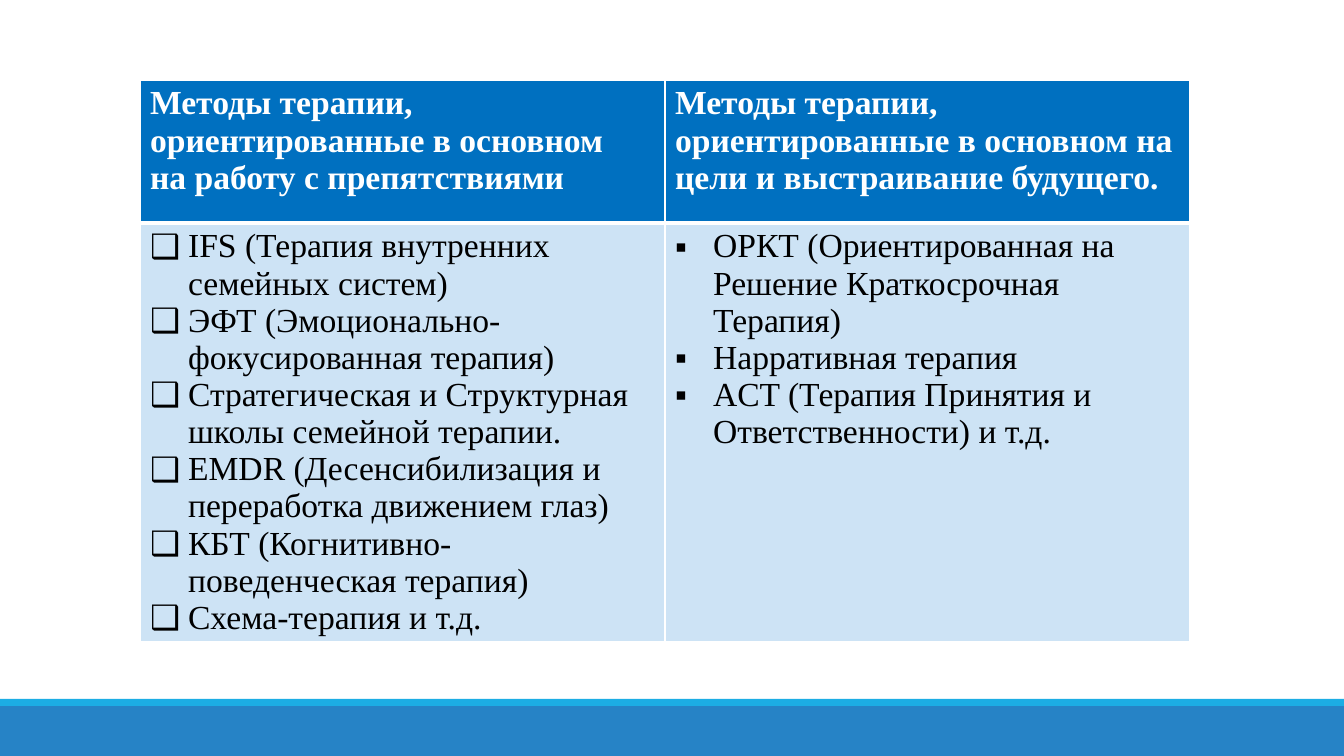
"""Builds a slide with a table comparing two groups of therapy methods."""
from lxml import etree
from pptx import Presentation, util as u
from pptx.dml.color import RGBColor
from pptx.enum import shapes
from pptx.oxml.ns import qn

COLUMNS = [
    {
        "title": "Методы терапии, ориентированные в основном на работу с препятствиями",
        "margin_right": 30,
        "bullet": "❑",
        "methods": [
            "IFS (Терапия внутренних семейных систем)",
            "ЭФТ (Эмоционально-фокусированная терапия)",
            "Стратегическая и Структурная школы семейной терапии.",
            "EMDR (Десенсибилизация и переработка движением глаз)",
            "КБТ (Когнитивно-поведенческая терапия)",
            "Схема-терапия и т.д.",
        ],
    },
    {
        "title": "Методы терапии, ориентированные в основном на цели и выстраивание будущего.",
        "margin_right": 10,
        "bullet": "▪",
        "methods": [
            "ОРКТ (Ориентированная на Решение Краткосрочная Терапия)",
            "Нарративная терапия",
            "ACT (Терапия Принятия и Ответственности) и т.д.",
        ],
    },
]
BARS = [(706, 50, "2683C6"), (699, 7, "1CADE4")]
WIDTH, HEIGHT = 1344, 756
TABLE_LEFT, TABLE_TOP, COLUMN_WIDTH = 140, 80, 525
ROW_HEIGHTS = [143, 418]
INDENT = 38
FONT, SIZE = "Times New Roman", 24


def px(length):
    return u.Emu(round(length * 914400 / 100.8))


def color(value):
    return RGBColor.from_string(value)


def add_bar(page, top, height, fill):
    bar = page.shapes.add_shape(
        shapes.MSO_SHAPE.RECTANGLE, 0, px(top), px(WIDTH), px(height))
    bar.shadow.inherit = False
    bar.fill.solid()
    bar.fill.fore_color.rgb = color(fill)
    bar.line.fill.background()


def style_cell(cell, fill, borders):
    properties = cell._tc.get_or_add_tcPr()
    for side, points in borders.items():
        line = etree.SubElement(properties, qn(f"a:ln{side}"), w=str(u.Pt(points)))
        solid = etree.SubElement(line, qn("a:solidFill"))
        etree.SubElement(solid, qn("a:srgbClr"), val="FFFFFF")
    cell.fill.solid()
    cell.fill.fore_color.rgb = color(fill)


def add_text(para, content, ink, bold):
    span = para.add_run()
    span.text = content
    span.font.name, span.font.size, span.font.bold = FONT, u.Pt(SIZE), bold
    span.font.color.rgb = color(ink)


def add_bullet(para, mark):
    properties = para._p.get_or_add_pPr()
    properties.set("marL", str(px(INDENT)))
    properties.set("indent", str(-px(INDENT)))
    etree.SubElement(properties, qn("a:buFont"), typeface="Arial")
    etree.SubElement(properties, qn("a:buChar"), char=mark)


def fill_column(table, index, column):
    head, body = table.cell(0, index), table.cell(1, index)
    style_cell(head, "0070C0", {"L": 1, "R": 1, "T": 1, "B": 3})
    style_cell(body, "CDE3F5", {"L": 1, "R": 1, "T": 3, "B": 1})
    head.margin_right = px(column["margin_right"])
    add_text(head.text_frame.paragraphs[0], column["title"], "FFFFFF", True)
    frame = body.text_frame
    for number, method in enumerate(column["methods"]):
        para = frame.add_paragraph() if number else frame.paragraphs[0]
        add_bullet(para, column["bullet"])
        add_text(para, method, "000000", False)


def main():
    deck = Presentation()
    deck.slide_width, deck.slide_height = px(WIDTH), px(HEIGHT)
    page = deck.slides.add_slide(deck.slide_layouts[6])
    for bar in BARS:
        add_bar(page, *bar)
    table = page.shapes.add_table(
        len(ROW_HEIGHTS), len(COLUMNS), px(TABLE_LEFT), px(TABLE_TOP),
        px(COLUMN_WIDTH * len(COLUMNS)), px(sum(ROW_HEIGHTS))).table
    for row, height in zip(table.rows, ROW_HEIGHTS):
        row.height = px(height)
    for index, column in enumerate(COLUMNS):
        table.columns[index].width = px(COLUMN_WIDTH)
        fill_column(table, index, column)
    deck.save("out.pptx")


if __name__ == "__main__":
    main()
